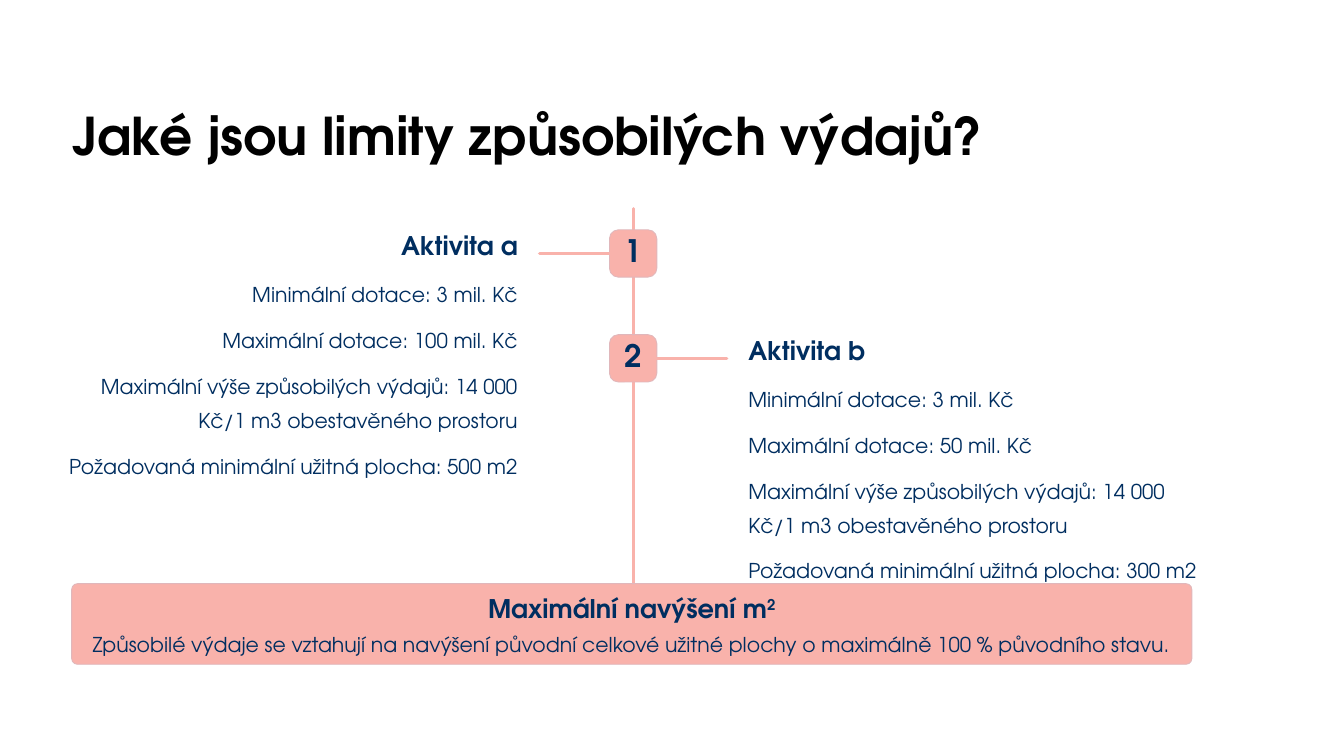
from lxml import etree
from pptx import Presentation
from pptx.dml.color import RGBColor
from pptx.enum.shapes import MSO_CONNECTOR, MSO_SHAPE
from pptx.enum.text import MSO_ANCHOR, MSO_AUTO_SIZE, PP_ALIGN
from pptx.oxml.ns import qn
from pptx.util import Inches, Pt

LEFT, CENTER, RIGHT = PP_ALIGN.LEFT, PP_ALIGN.CENTER, PP_ALIGN.RIGHT
TOP, MIDDLE = MSO_ANCHOR.TOP, MSO_ANCHOR.MIDDLE
ROUNDED, STRAIGHT = MSO_SHAPE.ROUNDED_RECTANGLE, MSO_CONNECTOR.STRAIGHT
NO_FIT = MSO_AUTO_SIZE.NONE
SITE_LEFT, SITE_RIGHT = 1, 3
TWO_CONTENT = 3

BLACK, NAVY, PINK, EDGE = "000000", "002E60", "F9B2AB", "E0B7BB"

# Text styles: font size, line height, weight, colour
TITLE = dict(size=37.1, line=46.2, bold=True, color=BLACK)
HEADING = dict(size=18.3, line=22.9, bold=True, color=NAVY)
BODY = dict(size=14.6, line=23.8, bold=False, color=NAVY)
NUMBER = dict(size=22.1, line=22.1, bold=True, color=NAVY)


def rgb(value):
    return RGBColor.from_string(value)


class SlideBuilder:
    """Places elements by percent of the slide's width and height."""

    font_name = "TeX Gyre Adventor"

    def __init__(self, deck, layout):
        self.deck = deck
        self.page = deck.slides.add_slide(deck.slide_layouts[layout])

    def x(self, share):
        return round(self.deck.slide_width * share / 100)

    def y(self, share):
        return round(self.deck.slide_height * share / 100)

    def fill_text(self, box, lines, align, anchor=TOP, gap=0):
        """Fill a box with (style, text, superscript) lines."""
        frame = box.text_frame
        settings = dict(auto_size=NO_FIT, word_wrap=True, vertical_anchor=anchor,
                        margin_left=0, margin_right=0, margin_top=0, margin_bottom=0)
        for name, value in settings.items():
            setattr(frame, name, value)
        for index, (style, text, raised) in enumerate(lines):
            para = frame.add_paragraph() if index else frame.paragraphs[0]
            properties = para._p.get_or_add_pPr()
            properties.set("marL", "0")
            properties.set("indent", "0")
            etree.SubElement(properties, qn("a:buNone"))
            spacing = dict(alignment=align, line_spacing=Pt(style["line"]),
                           space_before=Pt(gap if index else 0), space_after=Pt(0))
            for name, value in spacing.items():
                setattr(para, name, value)
            for part in filter(None, (text, raised)):
                span = para.add_run()
                span.text = part
                font = dict(name=self.font_name, size=Pt(style["size"]), bold=style["bold"])
                for name, value in font.items():
                    setattr(span.font, name, value)
                span.font.color.rgb = rgb(style["color"])
            if raised:
                span._r.get_or_add_rPr().set("baseline", "30000")

    def placeholder(self, index, area, lines, align, **options):
        box = self.page.placeholders[index]
        left, top, width, height = area
        box.left, box.top = self.x(left), self.y(top)
        box.width, box.height = self.x(width), self.y(height)
        self.fill_text(box, lines, align, **options)

    def label(self, area, style, text, align):
        left, top, width, height = area
        box = self.page.shapes.add_textbox(
            self.x(left), self.y(top), self.x(width), self.y(height))
        self.fill_text(box, [(style, text, "")], align)

    def panel(self, area, radius, lines):
        left, top, width, height = area
        box = self.page.shapes.add_shape(
            ROUNDED, self.x(left), self.y(top), self.x(width), self.y(height))
        box.shadow.inherit = False
        box.adjustments[0] = radius
        box.fill.solid()
        box.fill.fore_color.rgb = rgb(PINK)
        box.line.color.rgb = rgb(EDGE)
        box.line.width = Pt(0.6)
        self.fill_text(box, lines, CENTER, anchor=MIDDLE)
        return box

    def rule(self, start, end, box=None, site=None):
        line = self.page.shapes.add_connector(
            STRAIGHT, self.x(start[0]), self.y(start[1]), self.x(end[0]), self.y(end[1]))
        if box is not None:
            line.begin_connect(box, site)
        line.line.color.rgb = rgb(PINK)
        line.line.width = Pt(2.2)
        properties = line._element.spPr
        properties.find(qn("a:ln")).set("cap", "rnd")
        etree.SubElement(properties, qn("a:effectLst"))


# Layout in percent of the slide
AXIS = 47.11
BADGE_W, BADGE_H = 3.53, 6.27
ARM, TEXT_GAP = 5.2, 6.8
HEADING_W, HEADING_H = 19.35, 4.27
LIST_W, LIST_H, LIST_DROP = 33.76, 27, 5.8

ACTIVITIES = [
    # number, badge top, side (-1 left, 1 right), name, maximum grant, minimum area
    ("1", 30.4, -1, "Aktivita a", 100, 500),
    ("2", 44.27, 1, "Aktivita b", 50, 300),
]


def add_activity(slide, number, top, side, name, grant, area):
    middle = top + BADGE_H / 2
    edge = AXIS + side * BADGE_W / 2
    text_edge = edge + side * TEXT_GAP
    align = LEFT if side > 0 else RIGHT

    def left_of(width):
        return text_edge if side > 0 else text_edge - width

    # Numbered badge and its arm
    badge = slide.panel((AXIS - BADGE_W / 2, top, BADGE_W, BADGE_H), 0.187,
                        [(NUMBER, number, "")])
    slide.rule((edge, middle), (edge + side * ARM, middle), badge,
               SITE_RIGHT if side > 0 else SITE_LEFT)

    # Heading and limits
    slide.label((left_of(HEADING_W), top - 0.2, HEADING_W, HEADING_H),
                HEADING, name, align)
    limits = ["Minimální dotace: 3 mil. Kč",
              f"Maximální dotace: {grant} mil. Kč",
              "Maximální výše způsobilých výdajů: 14 000 Kč/1 m3 obestavěného prostoru",
              f"Požadovaná minimální užitná plocha: {area} m2"]
    slide.placeholder(int(number), (left_of(LIST_W), top + LIST_DROP, LIST_W, LIST_H),
                      [(BODY, limit, "") for limit in limits], align, gap=9)


def main():
    deck = Presentation()
    deck.slide_width, deck.slide_height = Inches(13.33), Inches(7.5)
    slide = SlideBuilder(deck, TWO_CONTENT)

    # Title
    slide.placeholder(0, (5.4, 13.33, 75, 8.67),
                      [(TITLE, "Jaké jsou limity způsobilých výdajů?", "")], LEFT)

    # Timeline
    slide.rule((AXIS, 27.6), (AXIS, 86.4))
    for activity in ACTIVITIES:
        add_activity(slide, *activity)

    # Closing panel
    slide.panel((5.33, 77.2, 83.35, 10.67), 0.072, [
        (HEADING, "Maximální navýšení m", "2"),
        (BODY, "Způsobilé výdaje se vztahují na navýšení původní celkové užitné plochy "
               "o maximálně 100 % původního stavu.", ""),
    ])

    deck.save("out.pptx")


if __name__ == "__main__":
    main()
